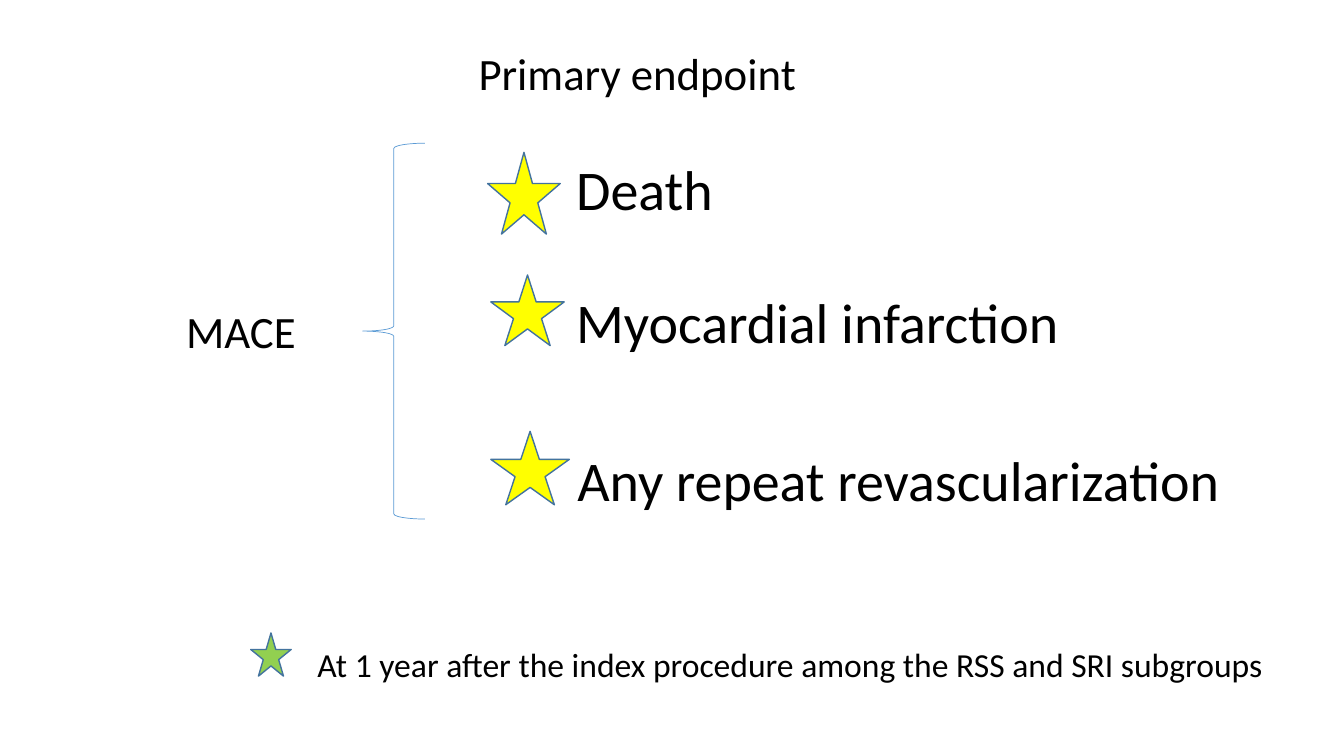
import pptx
import pptx.util
import pptx.dml.color
import pptx.enum.shapes
import pptx.enum.text

Cm, Pt = pptx.util.Cm, pptx.util.Pt
SHAPE = pptx.enum.shapes.MSO_SHAPE

FONT = "Calibri"
COLORS = {
    "text": "000000",
    "endpoint": "FFFF00",
    "follow_up": "92D050",
    "star_edge": "43739E",
    "brace": "5B9BD5",
}

# Wording, then star (left, top, width, height) and label (left, top, width),
# in cm from the corner of the endpoint list
ENDPOINTS = [
    ("Death", (0, 0.23, 1.83, 2.06), (1.98, 0.17, 3.99)),
    ("Myocardial infarction", (0.08, 3.32, 1.85, 1.78), (1.98, 3.5, 12.8)),
    ("Any repeat revascularization", (0.08, 7.26, 1.98, 1.85), (2.01, 7.49, 16.87)),
]


def color(name):
    return pptx.dml.color.RGBColor.from_string(COLORS[name])


def add_label(slide, wording, box, size, wrap=False):
    label = slide.shapes.add_textbox(*map(Cm, box))
    frame = label.text_frame
    frame.word_wrap = wrap
    frame.auto_size = pptx.enum.text.MSO_AUTO_SIZE.SHAPE_TO_FIT_TEXT
    run = frame.paragraphs[0].add_run()
    run.text = wording
    run.font.name = FONT
    run.font.size = Pt(size)
    run.font.color.rgb = color("text")


def add_outline(slide, preset, box, edge, weight, fill=None):
    outline = slide.shapes.add_shape(preset, *map(Cm, box))
    outline.shadow.inherit = False
    if fill:
        outline.fill.solid()
        outline.fill.fore_color.rgb = color(fill)
    else:
        outline.fill.background()
    outline.line.color.rgb = color(edge)
    outline.line.width = Pt(weight)


def add_star(slide, box, fill):
    add_outline(slide, SHAPE.STAR_5_POINT, box, "star_edge", 1, fill)


def add_endpoints(slide, left, top):
    """Three starred outcomes."""
    for wording, (star_x, star_y, star_w, star_h), (x, y, width) in ENDPOINTS:
        add_star(slide, (left + star_x, top + star_y, star_w, star_h), "endpoint")
        add_label(slide, wording, (left + x, top + y, width, 1.96), 40)


def add_composite(slide, left, top, height):
    """MACE and the brace that gathers its outcomes."""
    add_label(slide, "MACE", (left, top + 3.93, 3.3, 1.63), 32)
    add_outline(slide, SHAPE.LEFT_BRACE, (left + 4.7, top, 1.57, height), "brace", 0.5)


def add_follow_up(slide, left, top, width):
    """Starred note on the time of assessment."""
    add_star(slide, (left, top, 1.02, 1.09), "follow_up")
    add_label(slide, "At 1 year after the index procedure among the RSS and SRI subgroups",
              (left + 1.43, top + 0.15, width - 1.43, 1.27), 24, wrap=True)


def main():
    deck = pptx.Presentation()
    deck.slide_width, deck.slide_height = Cm(33.87), Cm(19.05)
    slide = deck.slides.add_slide(deck.slide_layouts[6])

    add_label(slide, "Primary endpoint", (11.81, 1.02, 8.61, 1.63), 32)
    add_composite(slide, left=4.44, top=3.61, height=9.47)
    add_endpoints(slide, left=12.29, top=3.61)
    add_follow_up(slide, left=6.32, top=15.95, width=26.45)

    deck.save("out.pptx")


if __name__ == "__main__":
    main()
